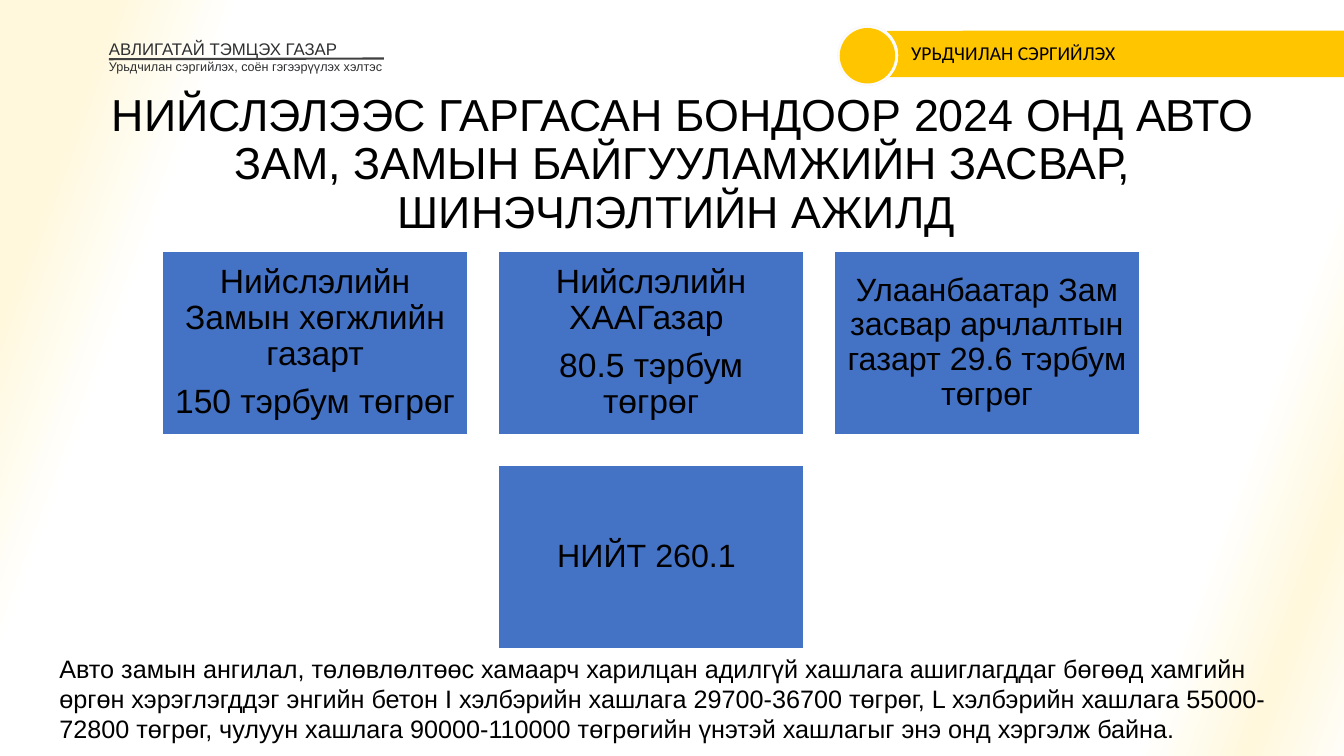
from lxml.etree import SubElement
from pptx import Presentation
from pptx.dml.color import RGBColor
from pptx.enum.shapes import MSO_CONNECTOR, MSO_SHAPE
from pptx.enum.text import MSO_ANCHOR, PP_ALIGN
from pptx.oxml.ns import qn
from pptx.util import Pt


def rgb(value):
    return RGBColor.from_string(value)


def set_stops(element, stops):
    gs_lst = element.find(".//" + qn("a:gsLst"))
    for gs in list(gs_lst):
        gs_lst.remove(gs)
    for pos, color in stops:
        gs = SubElement(gs_lst, qn("a:gs"), pos=str(pos * 1000))
        SubElement(gs, qn("a:srgbClr"), val=color)
    return gs_lst.getparent()


prs = Presentation()
prs.slide_width, prs.slide_height = Pt(960), Pt(540)
s = prs.slides.add_slide(prs.slide_layouts[5])

bg = s.background.fill
bg.gradient()
bg.gradient_angle = 340
set_stops(s.element, [(0, "FFF8DD"), (7, "FFF8DD"), (15, "FFFFFF"),
                      (87, "FFFFFF"), (94, "FFF8DD"), (100, "FFFDF7")])

title = s.shapes.title
title.left, title.top, title.width, title.height = Pt(34.6), Pt(62.6), Pt(906.5), Pt(104.4)
tf = title.text_frame
tf.word_wrap = True
tf.vertical_anchor = MSO_ANCHOR.TOP
p = tf.paragraphs[0]
p.alignment = PP_ALIGN.CENTER
p.line_spacing = 0.9
r = p.add_run()
r.text = "НИЙСЛЭЛЭЭС ГАРГАСАН БОНДООР 2024 ОНД АВТО ЗАМ, ЗАМЫН БАЙГУУЛАМЖИЙН ЗАСВАР, ШИНЭЧЛЭЛТИЙН АЖИЛД "
r.font.size, r.font.name = Pt(32), "Arial"
r.font.color.rgb = rgb("000000")

cards = [
    (0, 0, 24, ["Нийслэлийн Замын хөгжлийн газарт", "150 тэрбум төгрөг"]),
    (1, 0, 24, ["Нийслэлийн ХААГазар ", "80.5 тэрбум төгрөг"]),
    (2, 0, 23, ["Улаанбаатар Зам засвар арчлалтын газарт 29.6 тэрбум төгрөг"]),
    (1, 1, 23, ["НИЙТ 260.1 "]),
]
for col, row, size, lines in cards:
    sp = s.shapes.add_shape(MSO_SHAPE.RECTANGLE, Pt(116 + 240 * col),
                            Pt(179.3 + 152.8 * row), Pt(218.2), Pt(131))
    sp.shadow.inherit = False
    sp.fill.solid()
    sp.fill.fore_color.rgb = rgb("4472C4")
    sp.line.color.rgb = rgb("FFFFFF")
    sp.line.width = Pt(1)
    tf = sp.text_frame
    tf.word_wrap = True
    tf.vertical_anchor = MSO_ANCHOR.MIDDLE
    tf.margin_left = tf.margin_right = tf.margin_top = tf.margin_bottom = Pt(7)
    for i, text in enumerate(lines):
        p = tf.add_paragraph() if i else tf.paragraphs[0]
        p.alignment = PP_ALIGN.CENTER
        p.line_spacing = 0.9
        p.space_after = Pt(size * 0.35)
        r = p.add_run()
        r.text = text
        r.font.size, r.font.name = Pt(size), "Arial"
        r.font.color.rgb = rgb("000000")

tab = s.shapes.add_shape(MSO_SHAPE.ROUND_2_SAME_RECTANGLE, Pt(775.4), Pt(-129.6), Pt(33.1), Pt(336.2))
tab.rotation = 270
tab.adjustments[0] = 0.335
ring = s.shapes.add_shape(MSO_SHAPE.OVAL, Pt(598.3), Pt(18), Pt(43.2), Pt(43.2))
dot = s.shapes.add_shape(MSO_SHAPE.OVAL, Pt(599.8), Pt(20), Pt(39.6), Pt(39.6))
for sp in (tab, ring, dot):
    sp.shadow.inherit = False
    sp.line.fill.background()
    sp.fill.solid()
    sp.fill.fore_color.rgb = rgb("FFC600")

ring.fill.gradient()
grad = set_stops(ring.element, [(0, "FFFFFF"), (53, "FFFFFF"), (97, "F2F2F2")])
grad.remove(grad.find(qn("a:lin")))
circle = SubElement(grad, qn("a:path"), path="circle")
SubElement(circle, qn("a:fillToRect"), l="50000", t="50000", r="50000", b="50000")

texts = [
    (35.3, 463, 884.2, 72.7, True, 18, "Arial", "000000",
     "Авто замын ангилал, төлөвлөлтөөс хамаарч харилцан адилгүй хашлага ашиглагддаг бөгөөд "
     "хамгийн өргөн хэрэглэгддэг энгийн бетон I хэлбэрийн хашлага 29700-36700 төгрөг, "
     "L хэлбэрийн хашлага 55000-72800 төгрөг, чулуун хашлага 90000-110000 төгрөгийн "
     "үнэтэй хашлагыг энэ онд хэргэлж байна."),
    (77.8, 27.4, 168.5, 14.4, False, 12, "Arial", "2E2F31", "АВЛИГАТАЙ ТЭМЦЭХ ГАЗАР"),
    (77.8, 41.8, 198, 10.8, False, 9, "Arial", "2E2F31",
     "Урьдчилан сэргийлэх, соён гэгээрүүлэх хэлтэс"),
    (643.7, 25.9, 296.6, 24.5, True, 14, "Calibri", "000000", "УРЬДЧИЛАН СЭРГИЙЛЭХ"),
]
for x, y, w, h, inset, size, font, color, text in texts:
    tf = s.shapes.add_textbox(Pt(x), Pt(y), Pt(w), Pt(h)).text_frame
    tf.word_wrap = True
    if not inset:
        tf.margin_left = tf.margin_right = tf.margin_top = tf.margin_bottom = 0
    r = tf.paragraphs[0].add_run()
    r.text = text
    r.font.size, r.font.name = Pt(size), font
    r.font.color.rgb = rgb(color)

rule = s.shapes.add_connector(MSO_CONNECTOR.STRAIGHT, Pt(77.8), Pt(42.3), Pt(274.3), Pt(41.8))
rule.line.color.rgb = rgb("404040")
rule.line.width = Pt(1.5)
SubElement(rule.element.spPr, qn("a:effectLst"))

prs.save("out.pptx")
